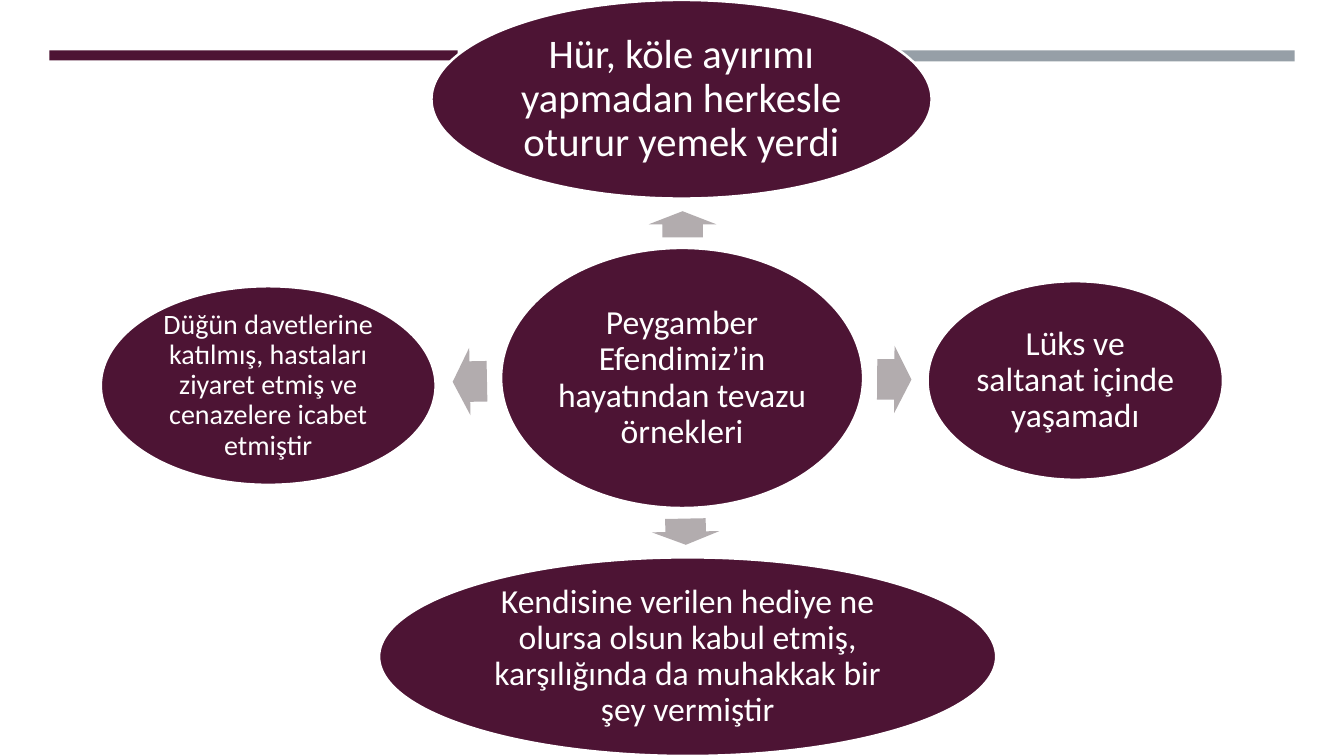
"""Builds a slide of a central idea with four examples around it."""
from pptx import Presentation
from pptx.dml.color import RGBColor
from pptx.enum.shapes import MSO_SHAPE
from pptx.enum.text import MSO_ANCHOR, PP_ALIGN
from pptx.util import Inches, Pt

BAR, OVAL, ARROW = MSO_SHAPE.RECTANGLE, MSO_SHAPE.OVAL, MSO_SHAPE.RIGHT_ARROW
CENTER, MIDDLE = PP_ALIGN.CENTER, MSO_ANCHOR.MIDDLE
PLUM, SLATE, GREY, WHITE = "4D1434", "969FA7", "B2ACAE", "FFFFFF"

presentation = Presentation()
presentation.slide_width = Inches(13.33)
presentation.slide_height = Inches(7.5)
slide = presentation.slides.add_slide(presentation.slide_layouts[6])


def add_part(preset, box, fill, outline=None):
    part = slide.shapes.add_shape(preset, *map(Inches, box))
    part.shadow.inherit = False
    part.fill.solid()
    part.fill.fore_color.rgb = RGBColor.from_string(fill)
    if outline:
        part.line.color.rgb = RGBColor.from_string(outline)
        part.line.width = Pt(1.75)
    else:
        part.line.fill.background()
    return part


def write(part, text, size=24, color=WHITE, inset=0.03, font="Calibri"):
    frame = part.text_frame
    frame.word_wrap = True
    frame.vertical_anchor = MIDDLE
    frame.margin_left = frame.margin_right = Inches(inset)
    frame.margin_top = frame.margin_bottom = Inches(inset)
    paragraph = frame.paragraphs[0]
    paragraph.alignment = CENTER
    paragraph.line_spacing = 0.9
    run = paragraph.add_run()
    run.text = text
    run.font.name = font
    run.font.size = Pt(size)
    run.font.color.rgb = RGBColor.from_string(color)


for bar_left, bar_height, bar_color in [(0.49, 0.1, PLUM), (8.79, 0.11, SLATE)]:
    add_part(BAR, (bar_left, 0.5, 4.05, bar_height), bar_color)

ideas = [
    ((4.97, 2.46, 3.59, 2.58), "Peygamber Efendimiz’in hayatından tevazu örnekleri", {}),
    ((4.28, 0, 4.96, 1.97), "Hür, köle ayırımı yapmadan herkesle oturur yemek yerdi",
     {"size": 29, "inset": 0.04}),
    ((9.2, 2.79, 2.93, 1.97), "Lüks ve saltanat içinde yaşamadı", {}),
    ((3.76, 5.53, 6.12, 1.97),
     "Kendisine verilen hediye ne olursa olsun kabul etmiş, "
     "karşılığında da muhakkak bir şey vermiştir", {}),
    ((1, 2.84, 3.32, 1.97),
     "Düğün davetlerine katılmış, hastaları ziyaret etmiş ve cenazelere icabet etmiştir",
     {"size": 20}),
]
for box, text, text_format in ideas:
    write(add_part(OVAL, box, PLUM, WHITE), text, **text_format)

arrows = [
    (6.64, 1.89, 0.26, 270),
    (8.7, 3.43, 0.34, 0.4),
    (6.67, 4.94, 0.26, 88.9),
    (4.49, 3.45, 0.34, 178.9),
]
for left, top, length, angle in arrows:
    arrow = add_part(ARROW, (left, top, length, 0.67), GREY)
    arrow.adjustments[0] = 0.6
    arrow.adjustments[1] = 0.5
    arrow.rotation = angle

presentation.save("out.pptx")
